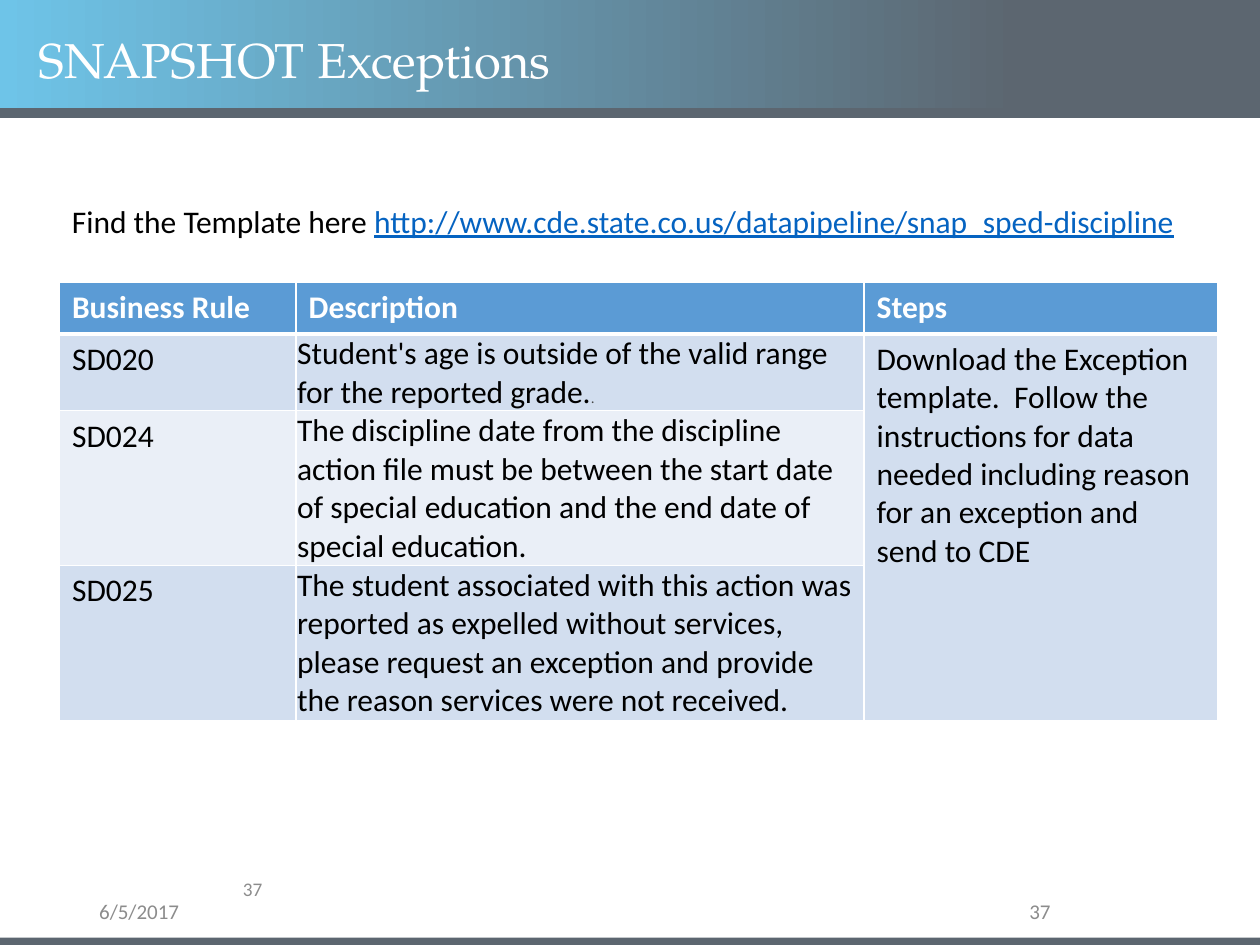
from lxml import etree
from pptx import Presentation, util as u
from pptx.dml import color as dc
from pptx.enum import shapes as sh, text as tx
from pptx.oxml import ns

HUES = {
    "sky": "6EC4E8", "slate": "5C6670", "white": "FFFFFF", "black": "000000",
    "gray": "8C8C8C", "link": "0563C1", "dot": "454545",
    "head": "5B9BD5", "odd": "D2DEEF", "even": "EAEFF7",
}
STEPS = ("Download the Exception template.  Follow the instructions for data "
         "needed including reason for an exception and send to CDE")
RULES = [
    ("SD020", "Student's age is outside of the valid range for the reported grade."),
    ("SD024", "The discipline date from the discipline action file must be between "
              "the start date of special education and the end date of special education."),
    ("SD025", "The student associated with this action was reported as expelled without "
              "services, please request an exception and provide the reason services "
              "were not received."),
]


def hue(name):
    return dc.RGBColor.from_string(HUES[name])


def cm(*vals):
    return [u.Cm(v) for v in vals]


def add_run(para, words, size=18, tint="black", face="Calibri", bold=False, line=False):
    run = para.add_run()
    run.text = words
    font = run.font
    font.name, font.size, font.bold = face, u.Pt(size), bold
    font.underline = line
    font.color.rgb = hue(tint)


def add_text(slide, box, align=tx.PP_ALIGN.LEFT, anchor=tx.MSO_ANCHOR.MIDDLE):
    """Add a wrapping text box and return its empty first paragraph."""
    frame = slide.shapes.add_textbox(*cm(*box)).text_frame
    frame.word_wrap = True
    frame.vertical_anchor = anchor
    para = frame.paragraphs[0]
    para.alignment = align
    return para


def add_bar(slide, box):
    bar = slide.shapes.add_shape(sh.MSO_SHAPE.RECTANGLE, *cm(*box))
    bar.shadow.inherit = False
    bar.line.fill.background()
    bar.fill.solid()
    bar.fill.fore_color.rgb = hue("slate")
    return bar


def add_head(slide, box):
    """Fill the banner with a gradient, underline it and set the title on it."""
    x, y, w, h = box
    fill = add_bar(slide, box).fill
    fill.gradient()
    fill.gradient_angle = 0
    for stop, name, pos in zip(fill.gradient_stops, ("sky", "slate"), (0, 0.81)):
        stop.color.rgb = hue(name)
        stop.position = pos
    add_bar(slide, (x, y + h - 0.02, w, 0.2))

    title = slide.shapes.title
    title.left, title.top, title.width, title.height = cm(x + 0.53, y + 0.53, 21.9, 1.45)
    frame = title.text_frame
    frame.word_wrap = True
    frame.auto_size = tx.MSO_AUTO_SIZE.NONE
    frame.vertical_anchor = tx.MSO_ANCHOR.MIDDLE
    para = frame.paragraphs[0]
    para.alignment = tx.PP_ALIGN.LEFT
    para.line_spacing = 0.9
    add_run(para, "SNAPSHOT Exceptions", 28, "white", "TeX Gyre Pagella")
    # The title stands in front of the bars
    tree = title._element.getparent()
    tree.append(title._element)


def add_intro(slide, box):
    x, y, w, h = box
    para = add_text(slide, (x + 0.13, y, w - 0.13, h), anchor=tx.MSO_ANCHOR.TOP)
    add_run(para, "Find the Template here ")
    add_run(para, "http://www.cde.state.co.us/datapipeline/snap_sped-discipline",
            tint="link", line=True)


def style_cell(cell, tint, base=1):
    """Give a cell white borders, then its fill."""
    props = cell._tc.get_or_add_tcPr()
    for side, wide in (("L", 1), ("R", 1), ("T", 1), ("B", base)):
        edge = etree.SubElement(props, ns.qn("a:ln" + side), w=str(u.Pt(wide)))
        fill = etree.SubElement(edge, ns.qn("a:solidFill"))
        etree.SubElement(fill, ns.qn("a:srgbClr"), val=HUES["white"])
    cell.fill.solid()
    cell.fill.fore_color.rgb = hue(tint)


def add_rules(slide, box):
    grid = slide.shapes.add_table(len(RULES) + 1, 3, *cm(*box)).table
    for col, wide in zip(grid.columns, cm(4.77, 11.45, 7.13)):
        col.width = wide
    for row, high in zip(grid.rows, cm(1.04, 1.55, 3.12, 3.12)):
        row.height = high

    for c, words in enumerate(("Business Rule", "Description", "Steps")):
        cell = grid.cell(0, c)
        style_cell(cell, "head", 3)
        add_run(cell.text_frame.paragraphs[0], words, tint="white", bold=True)

    for r, texts in enumerate(RULES, 1):
        for c, words in enumerate(texts):
            cell = grid.cell(r, c)
            style_cell(cell, "odd" if r % 2 else "even")
            add_run(cell.text_frame.paragraphs[0], words)
        cell.margin_left = cell.margin_right = cell.margin_top = u.Cm(0.02)
        cell.margin_bottom = 0
        style_cell(grid.cell(r, 2), "odd")
    add_run(grid.cell(1, 1).text_frame.paragraphs[0], ".", 8, "dot", "Lato")

    steps = grid.cell(1, 2)
    steps.merge(grid.cell(len(RULES), 2))
    add_run(steps.text_frame.paragraphs[0], STEPS)


def add_foot(slide, box):
    x, y, w, h = box
    mode = tx.PP_ALIGN
    for left, top, wide, high, align, words, size in (
        (1.75, 0.68, 5.72, 0.58, mode.LEFT, "6/5/2017", 12),
        (17.93, 0.68, 3.5, 0.58, mode.RIGHT, "37", 12),
        (1.07, 0, 8.05, 1.02, mode.CENTER, "37", 11),
    ):
        para = add_text(slide, (x + left, y + top, wide, high), align)
        add_run(para, words, size, "gray")
    add_bar(slide, (x, y + h - 0.15, w, 0.15))


def main():
    deck = Presentation()
    deck.slide_width, deck.slide_height = cm(25.4, 19.05)
    slide = deck.slides.add_slide(deck.slide_layouts[5])
    add_head(slide, (0, 0, 25.4, 2.2))
    add_intro(slide, (1.07, 3.94, 23.5, 1.02))
    add_rules(slide, (1.2, 5.69, 23.35, 8.83))
    add_foot(slide, (0, 17.4, 25.4, 1.65))
    deck.save("out.pptx")


if __name__ == "__main__":
    main()
